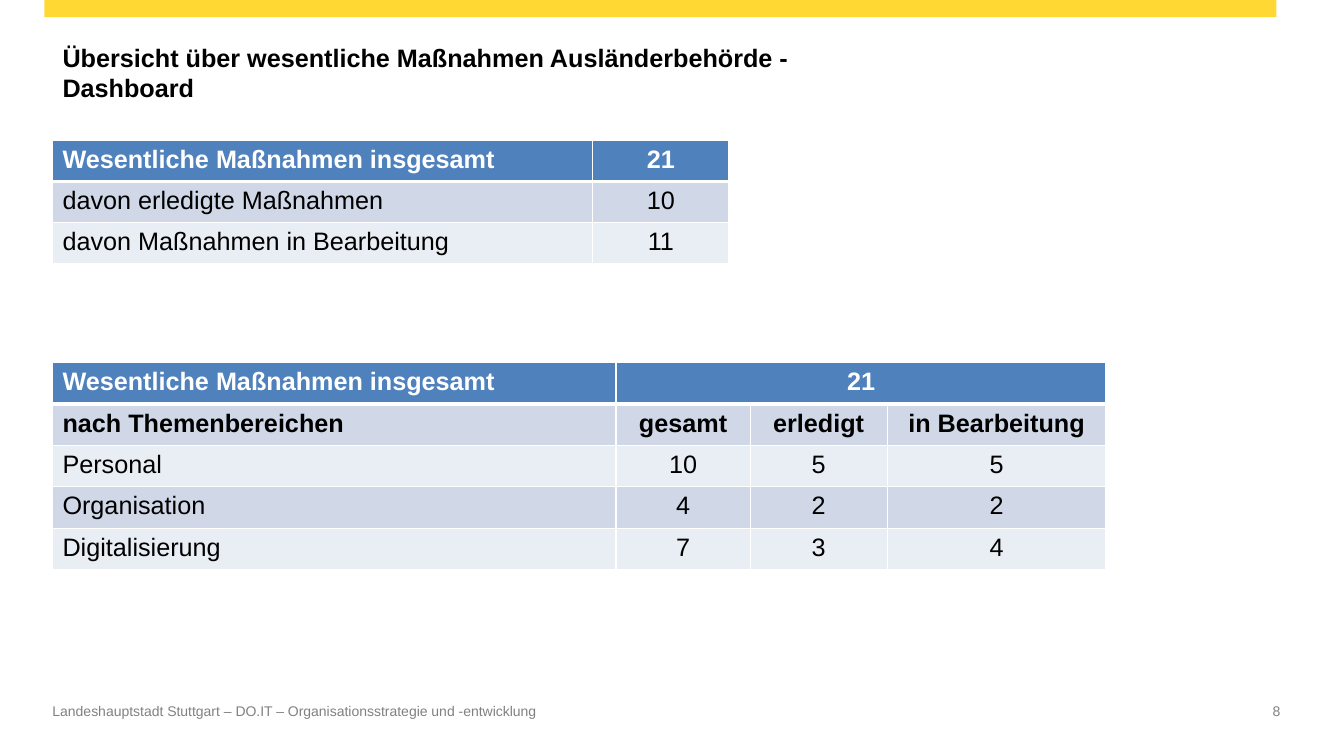
from dataclasses import dataclass

from lxml import etree
from pptx import Presentation
from pptx.dml.color import RGBColor
from pptx.enum.shapes import MSO_SHAPE
from pptx.enum.text import MSO_ANCHOR, MSO_AUTO_SIZE, PP_ALIGN
from pptx.oxml.ns import qn
from pptx.util import Inches, Pt

RECTANGLE = MSO_SHAPE.RECTANGLE
MIDDLE = MSO_ANCHOR.MIDDLE
NO_AUTOFIT = MSO_AUTO_SIZE.NONE
LEFT, CENTER, RIGHT = PP_ALIGN.LEFT, PP_ALIGN.CENTER, PP_ALIGN.RIGHT


@dataclass(frozen=True)
class Theme:
    font: str = "Arial"
    text_size: int = 18
    footer_size: int = 10
    accent: str = "FFD833"
    header: str = "4F81BD"
    bands: tuple = ("E9EDF4", "D0D8E8")
    dark: str = "000000"
    light: str = "FFFFFF"
    muted: str = "818181"


theme = Theme()


def format_text(text_frame, size, color, bold, alignment):
    paragraph = text_frame.paragraphs[0]
    paragraph.alignment = alignment
    for run in paragraph.runs:
        run.font.name = theme.font
        run.font.size = Pt(size)
        run.font.bold = bold
        run.font.color.rgb = RGBColor.from_string(color)


def add_borders(cell, bottom_width):
    properties = cell._tc.get_or_add_tcPr()
    for side in ("lnL", "lnR", "lnT", "lnB"):
        width = bottom_width if side == "lnB" else 1
        line = etree.SubElement(properties, qn(f"a:{side}"), w=str(Pt(width)))
        fill = etree.SubElement(line, qn("a:solidFill"))
        etree.SubElement(fill, qn("a:srgbClr"), val=theme.light)


presentation = Presentation()
presentation.slide_width = Inches(13.33)
presentation.slide_height = Inches(7.5)
slide = presentation.slides.add_slide(presentation.slide_layouts[5])

top_bar = slide.shapes.add_shape(
    RECTANGLE, Inches(0.44), Inches(0), Inches(12.22), Inches(0.17)
)
top_bar.shadow.inherit = False
top_bar.fill.solid()
top_bar.fill.fore_color.rgb = RGBColor.from_string(theme.accent)
top_bar.line.fill.background()

title = slide.shapes.title
title.left, title.top = Inches(0.52), Inches(0.39)
title.width, title.height = Inches(8.15), Inches(0.65)
title.text_frame.text = "Übersicht über wesentliche Maßnahmen Ausländerbehörde - Dashboard"
title.text_frame.word_wrap = True
title.text_frame.auto_size = NO_AUTOFIT
title.text_frame.vertical_anchor = MIDDLE
format_text(title.text_frame, theme.text_size, theme.dark, True, LEFT)

row_height = 0.41
tables = [
    {
        "top": 1.39,
        "columns": [5.36, 1.35],
        "bold_rows": 1,
        "rows": [
            ["Wesentliche Maßnahmen insgesamt", "21"],
            ["davon erledigte Maßnahmen", "10"],
            ["davon Maßnahmen in Bearbeitung", "11"],
        ],
    },
    {
        "top": 3.6,
        "columns": [5.59, 1.33, 1.36, 2.17],
        "bold_rows": 2,
        "rows": [
            ["Wesentliche Maßnahmen insgesamt", "21", "", ""],
            ["nach Themenbereichen", "gesamt", "erledigt", "in Bearbeitung"],
            ["Personal", "10", "5", "5"],
            ["Organisation", "4", "2", "2"],
            ["Digitalisierung", "7", "3", "4"],
        ],
    },
]

for content in tables:
    rows, columns = content["rows"], content["columns"]
    table = slide.shapes.add_table(
        len(rows), len(columns), Inches(0.52), Inches(content["top"]),
        Inches(sum(columns)), Inches(row_height * len(rows)),
    ).table
    for column, width in zip(table.columns, columns):
        column.width = Inches(width)
    for row_index, values in enumerate(rows):
        is_header = row_index == 0
        fill_color = theme.header if is_header else theme.bands[row_index % 2]
        text_color = theme.light if is_header else theme.dark
        for column_index, value in enumerate(values):
            cell = table.cell(row_index, column_index)
            add_borders(cell, 3 if is_header else 1)
            cell.fill.solid()
            cell.fill.fore_color.rgb = RGBColor.from_string(fill_color)
            cell.text_frame.text = value
            format_text(
                cell.text_frame, theme.text_size, text_color,
                row_index < content["bold_rows"],
                CENTER if column_index else LEFT,
            )
    if len(columns) > 2:
        table.cell(0, 1).merge(table.cell(0, len(columns) - 1))

footers = [
    ("Landeshauptstadt Stuttgart – DO.IT – Organisationsstrategie und -entwicklung",
     0.52, 7.35, LEFT),
    ("8", 11.6, 1.1, RIGHT),
]
for text, left, width, alignment in footers:
    footer = slide.shapes.add_textbox(
        Inches(left), Inches(6.97), Inches(width), Inches(0.39)
    )
    text_frame = footer.text_frame
    text_frame.word_wrap = True
    text_frame.margin_left = text_frame.margin_right = Inches(0)
    text_frame.margin_top = text_frame.margin_bottom = Inches(0)
    text_frame.text = text
    format_text(text_frame, theme.footer_size, theme.muted, False, alignment)

presentation.save("out.pptx")
